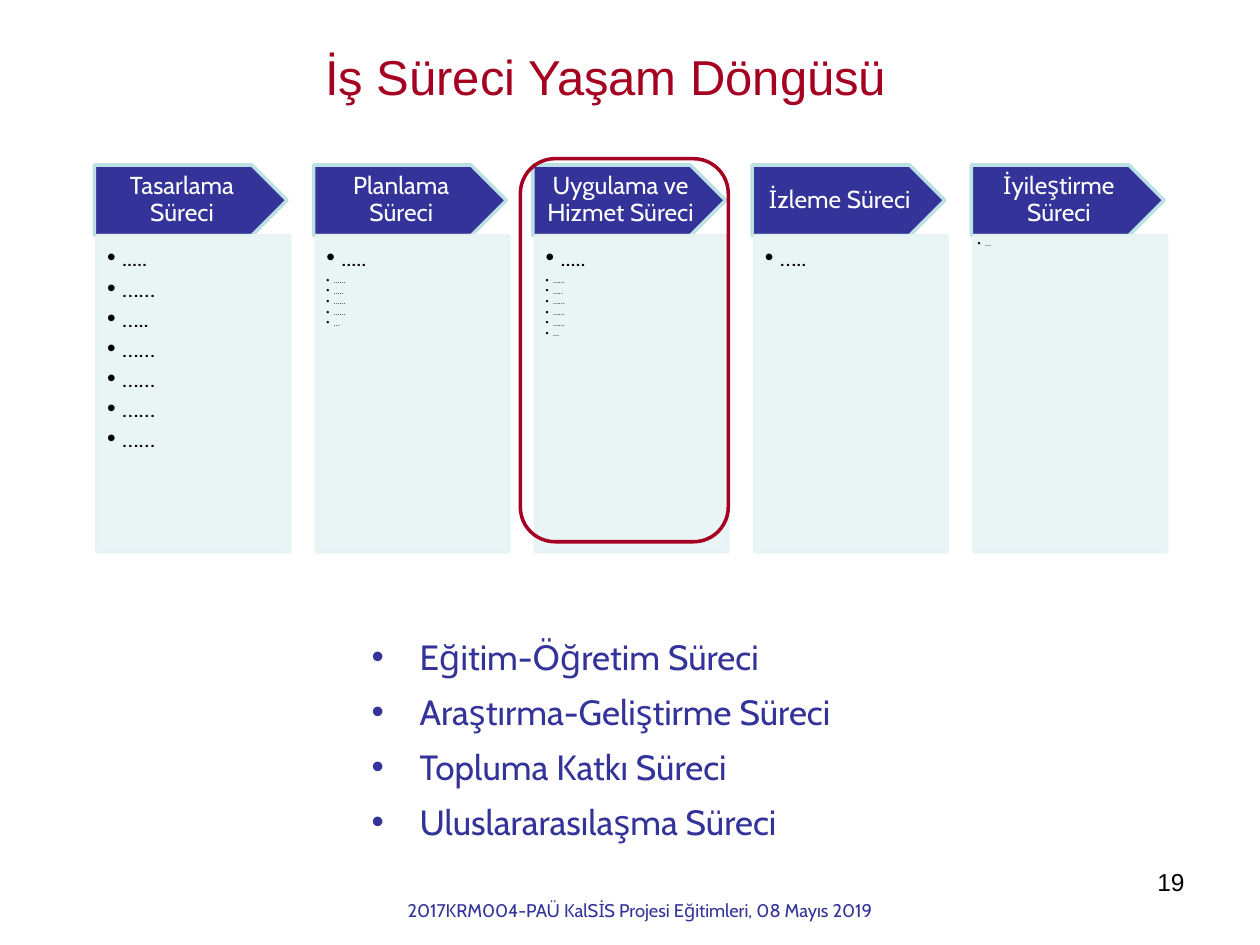
import dataclasses

import pptx
import pptx.dml.color
import pptx.enum.shapes
import pptx.enum.text
import pptx.oxml
import pptx.oxml.ns
import pptx.util

Inches = pptx.util.Inches
Pt = pptx.util.Pt
Shapes = pptx.enum.shapes.MSO_SHAPE
Align = pptx.enum.text.PP_ALIGN
Anchor = pptx.enum.text.MSO_ANCHOR


@dataclasses.dataclass(frozen=True)
class Theme:
    navy: str = "333399"
    crimson: str = "A50021"
    aqua: str = "BBE0E3"
    mist: str = "E7F3F4"
    white: str = "FFFFFF"
    black: str = "000000"
    heading_font: str = "Arial"
    body_font: str = "Cabin"
    title_size: float = 28
    list_size: float = 20
    label_size: float = 14
    footer_size: float = 10.5
    tiny_size: float = 5
    line_width: float = 2


THEME = Theme()
COLUMN_LEFT, COLUMN_PITCH, COLUMN_WIDTH = 0.75, 1.74, 1.53
ARROW_TOP, ARROW_HEIGHT = 1.31, 0.56
PANEL_SHIFT, PANEL_HEIGHT = 0.02, 2.51
WIDE_INSETS = (0.08, 0.08, 0.11, 0.12)
TIGHT_INSETS = (0.03, 0.03, 0.04, 0.04)

STAGES = [
    ("Tasarlama Süreci", [".....", "……", "…..", "……", "……", "……", "……"], [], WIDE_INSETS),
    ("Planlama Süreci", ["....."], ["……", "…..", "……", "……", "…"], WIDE_INSETS),
    ("Uygulama ve Hizmet Süreci", ["....."], ["……", "…..", "……", "……", "……", "…"], WIDE_INSETS),
    ("İzleme Süreci", ["….."], [], WIDE_INSETS),
    ("İyileştirme Süreci", [], ["…"], TIGHT_INSETS),
]
PROCESSES = [
    "Eğitim-Öğretim Süreci",
    "Araştırma-Geliştirme Süreci",
    "Topluma Katkı Süreci",
    "Uluslararasılaşma Süreci",
]


def rgb(value):
    return pptx.dml.color.RGBColor.from_string(value)


def place(box, left, top, width, height):
    box.left, box.top = Inches(left), Inches(top)
    box.width, box.height = Inches(width), Inches(height)


def set_insets(frame, left, top, right, bottom):
    frame.margin_left, frame.margin_top = Inches(left), Inches(top)
    frame.margin_right, frame.margin_bottom = Inches(right), Inches(bottom)


def set_font(para, size, color, name=THEME.body_font):
    para.font.name = name
    para.font.size = Pt(size)
    para.font.color.rgb = rgb(color)


def add_bullet(para, indent):
    properties = para._p.get_or_add_pPr()
    properties.set("marL", str(Inches(indent)))
    properties.set("indent", str(-Inches(indent)))
    for tag, attribute, value in (("buFont", "typeface", "Arial"), ("buChar", "char", "•")):
        bullet = pptx.oxml.parse_xml(f'<a:{tag} {pptx.oxml.ns.nsdecls("a")} {attribute}="{value}"/>')
        properties.append(bullet)


def next_paragraph(frame, index):
    return frame.add_paragraph() if index else frame.paragraphs[0]


def set_opacity(box, percent):
    for color in box._element.spPr.findall(".//" + pptx.oxml.ns.qn("a:srgbClr")):
        alpha = pptx.oxml.parse_xml(f'<a:alpha {pptx.oxml.ns.nsdecls("a")} val="{percent * 1000}"/>')
        color.append(alpha)


def add_box(page, preset, bounds, fill, line):
    box = page.shapes.add_shape(preset, *map(Inches, bounds))
    box.shadow.inherit = False
    if fill:
        box.fill.solid()
        box.fill.fore_color.rgb = rgb(fill)
    else:
        box.fill.background()
    box.line.color.rgb = rgb(line)
    box.line.width = Pt(THEME.line_width)
    return box


def add_arrow(page, left, label):
    bounds = (left, ARROW_TOP, COLUMN_WIDTH, ARROW_HEIGHT)
    box = add_box(page, Shapes.PENTAGON, bounds, THEME.navy, THEME.aqua)
    frame = box.text_frame
    frame.word_wrap = True
    frame.vertical_anchor = Anchor.MIDDLE
    set_insets(frame, 0.11, 0.06, 0.11, 0.06)
    para = frame.paragraphs[0]
    para.text = label
    para.alignment = Align.CENTER
    para.line_spacing = 0.9
    set_font(para, THEME.label_size, THEME.white)


def add_panel(page, left, large_items, tiny_items, insets):
    bounds = (left, ARROW_TOP + ARROW_HEIGHT, COLUMN_WIDTH, PANEL_HEIGHT)
    box = add_box(page, Shapes.RECTANGLE, bounds, THEME.mist, THEME.mist)
    set_opacity(box, 90)
    frame = box.text_frame
    frame.word_wrap = True
    frame.vertical_anchor = Anchor.TOP
    set_insets(frame, *insets)
    items = [(text, THEME.label_size, 0.12) for text in large_items]
    items += [(text, THEME.tiny_size, 0.06) for text in tiny_items]
    for index, (text, size, indent) in enumerate(items):
        para = next_paragraph(frame, index)
        para.text = text
        para.alignment = Align.LEFT
        para.line_spacing = 0.9
        para.space_after = Pt(0.15 * size)
        add_bullet(para, indent)
        set_font(para, size, THEME.black)


def add_label(page, bounds, text, align, size, color, font):
    frame = page.shapes.add_textbox(*map(Inches, bounds)).text_frame
    frame.word_wrap = True
    para = frame.paragraphs[0]
    para.text = text
    para.alignment = align
    set_font(para, size, color, font)


def fill_title(box, text):
    place(box, 2.48, 0.32, 4.71, 0.57)
    frame = box.text_frame
    frame.auto_size = pptx.enum.text.MSO_AUTO_SIZE.NONE
    frame.word_wrap = False
    frame.vertical_anchor = Anchor.TOP
    para = frame.paragraphs[0]
    para.text = text
    para.alignment = Align.LEFT
    set_font(para, THEME.title_size, THEME.crimson, THEME.heading_font)


def fill_list(box, items):
    place(box, 2.85, 4.95, 5, 1.84)
    frame = box.text_frame
    frame.auto_size = pptx.enum.text.MSO_AUTO_SIZE.NONE
    for index, text in enumerate(items):
        para = next_paragraph(frame, index)
        para.text = text
        para.line_spacing = 1.14
        para.space_before = Pt(0.2 * THEME.list_size if index else 0)
        add_bullet(para, 0.38)
        set_font(para, THEME.list_size, THEME.navy)


def main():
    deck = pptx.Presentation()
    deck.slide_width, deck.slide_height = Inches(10), Inches(7.5)
    page = deck.slides.add_slide(deck.slide_layouts[1])
    fill_title(page.shapes.title, "İş Süreci Yaşam Döngüsü")
    fill_list(page.placeholders[1], PROCESSES)
    for index, (label, large_items, tiny_items, insets) in enumerate(STAGES):
        left = COLUMN_LEFT + index * COLUMN_PITCH
        add_arrow(page, left, label)
        add_panel(page, left + PANEL_SHIFT, large_items, tiny_items, insets)
    add_box(page, Shapes.ROUNDED_RECTANGLE, (4.13, 1.26, 1.65, 3.04), None, THEME.crimson)
    add_label(page, (2.87, 7.09, 4.42, 0.31), "2017KRM004-PAÜ KalSİS Projesi Eğitimleri, 08 Mayıs 2019",
              Align.CENTER, THEME.footer_size, THEME.navy, THEME.body_font)
    add_label(page, (7.17, 6.83, 2.33, 0.52), "19",
              Align.RIGHT, THEME.label_size, THEME.black, THEME.heading_font)
    deck.save("out.pptx")


if __name__ == "__main__":
    main()
